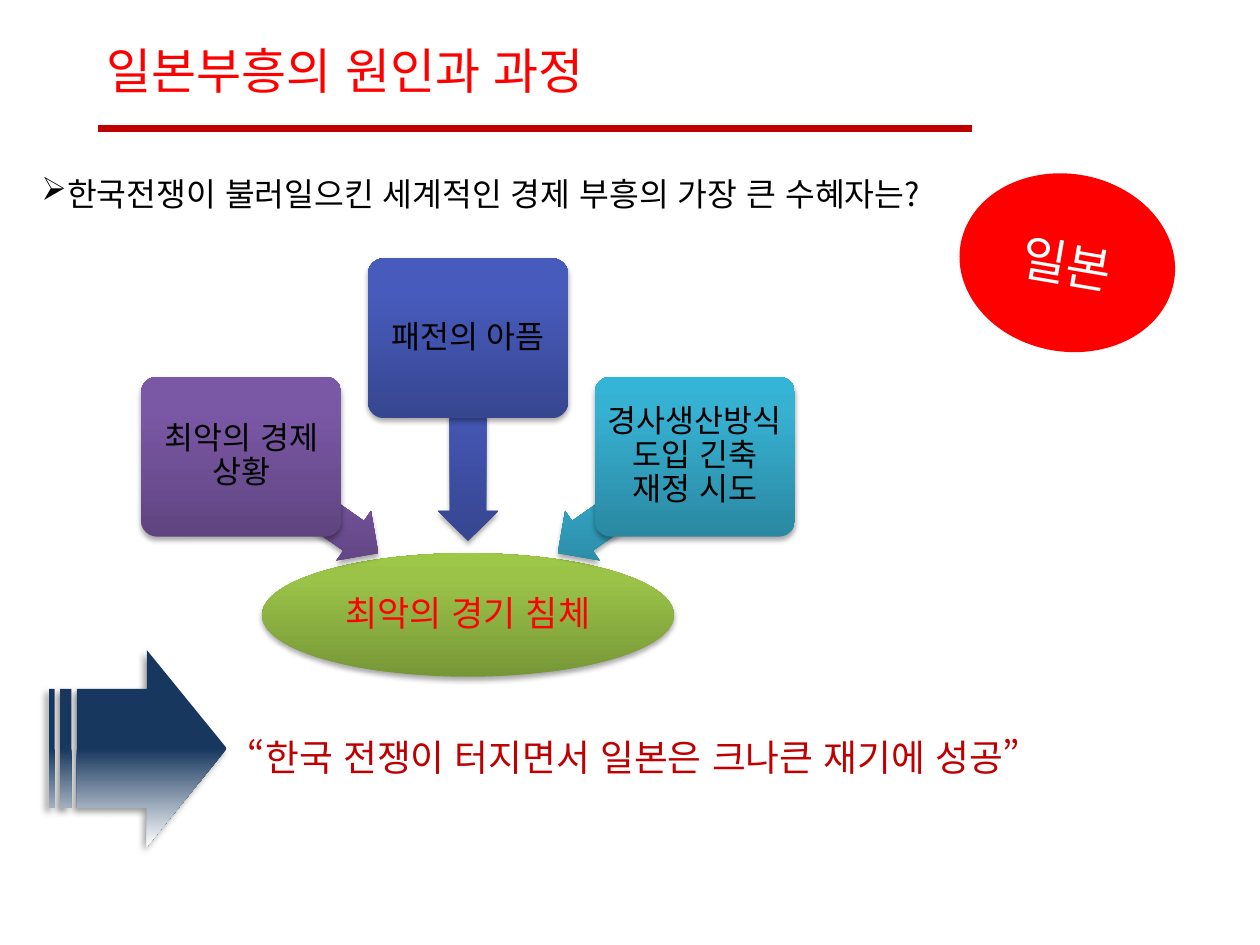
from lxml import etree
from pptx import Presentation
from pptx.dml.color import RGBColor
from pptx.enum import lang, shapes, text
from pptx.oxml import ns
from pptx.util import Pt

FONT = "Noto Sans CJK KR"
C = {
    "red": "FF0000", "crimson": "C00000", "black": "000000", "white": "FFFFFF",
    "navy": "17375E",
}
GRADS = {
    "green": [(0, "779737"), (80, "9BC348"), (100, "9DC746")],
    "purple": [(0, "5F4480"), (80, "7B58A6"), (100, "7C57A8")],
    "blue": [(0, "374691"), (80, "475BBC"), (100, "455ABF")],
    "teal": [(0, "2A88A2"), (80, "37B1D2"), (100, "34B4D6")],
    "fade": [(50, C["navy"]), (100, C["white"])],
}
SOFT = (35, 3.1, 1.8, 90)
DEEP = (40, 4, 3, 135)
MID, TOP = text.MSO_ANCHOR.MIDDLE, text.MSO_ANCHOR.TOP
CENTER, LEFT = text.PP_ALIGN.CENTER, text.PP_ALIGN.LEFT
KIND = shapes.MSO_SHAPE


def add(parent, tag, **attrs):
    el = etree.SubElement(parent, ns.qn(tag))
    for key, value in attrs.items():
        el.set(key, str(value))
    return el


def color(parent, value):
    return add(parent, "a:srgbClr", val=value)


def write(sp, words, size, fill, align=CENTER, anchor=MID, margin=None, bullet=None, spacing=None):
    tf = sp.text_frame
    tf.word_wrap = True
    tf.vertical_anchor = anchor
    if margin is not None:
        tf.margin_left = tf.margin_right = tf.margin_top = tf.margin_bottom = Pt(margin)
    p = tf.paragraphs[0]
    p.alignment = align
    if spacing:
        p.line_spacing = spacing
    if bullet:
        add(p._p.get_or_add_pPr(), "a:buChar", char=bullet)
    r = p.add_run()
    r.text = words
    r.font.size = Pt(size)
    r.font.name = FONT
    r.font.language_id = lang.MSO_LANGUAGE_ID.KOREAN
    r.font.color.rgb = RGBColor.from_string(C[fill])
    add(r._r.get_or_add_rPr(), "a:ea", typeface=FONT)


def label(s, x, y, w, h, words, size, fill, **style):
    sp = s.shapes.add_textbox(Pt(x), Pt(y), Pt(w), Pt(h))
    write(sp, words, size, fill, **style)


def shape(s, kind, x, y, w, h, rotation=0, adjust=()):
    sp = s.shapes.add_shape(kind, Pt(x), Pt(y), Pt(w), Pt(h))
    sp.shadow.inherit = False
    sp.line.fill.background()
    sp.rotation = rotation
    for i, value in enumerate(adjust):
        sp.adjustments[i] = value
    return sp


def shade(sp, grad, angle=270, shadow=SOFT):
    pr = sp._element.spPr
    fill = etree.Element(ns.qn("a:gradFill"), rotWithShape="0")
    stops = add(fill, "a:gsLst")
    for pos, value in GRADS[grad]:
        color(add(stops, "a:gs", pos=pos * 1000), value)
    add(fill, "a:lin", ang=angle * 60000, scaled=0)
    pr.find(ns.qn("a:prstGeom")).addnext(fill)
    alpha, blur, dist, direction = shadow
    outer = add(pr.find(ns.qn("a:effectLst")), "a:outerShdw", blurRad=int(Pt(blur)),
                dist=int(Pt(dist)), dir=direction * 60000, rotWithShape=0)
    add(color(outer, C["black"]), "a:alpha", val=alpha * 1000)


def header(s, x, y):
    label(s, x, y, 315.4, 56.9, "일본부흥의 원인과 과정", 28, "red", anchor=MID)
    rule_x, rule_y = x + 16.6, y + 61.9
    rule = s.shapes.add_connector(shapes.MSO_CONNECTOR.STRAIGHT, Pt(rule_x), Pt(rule_y),
                                  Pt(rule_x + 499), Pt(rule_y))
    rule.line.color.rgb = RGBColor.from_string(C["crimson"])
    rule.line.width = Pt(4)
    add(rule._element.spPr, "a:effectLst")


def question(s, x, y):
    label(s, x, y, 596.2, 33.8, "한국전쟁이 불러일으킨 세계적인 경제 부흥의 가장 큰 수혜자는?",
          18.5, "black", align=LEFT, anchor=TOP, bullet="➢")
    sp = shape(s, KIND.OVAL, x + 531.4, y + 3.6, 123.8, 101.5, rotation=9.7)
    sp.fill.solid()
    sp.fill.fore_color.rgb = RGBColor.from_string(C["red"])
    write(sp, "일본", 28, "white")


def causes(s, x, y):
    tile_w, tile_h, step, drop = 114.5, 91.4, 129.6, 67.7
    middle = x + step + tile_w / 2
    result_w = 235.4
    result = shape(s, KIND.OVAL, middle - result_w / 2, y + 168.5, result_w, 70.6)
    shade(result, "green")
    write(result, "최악의 경기 침체", 20, "red", margin=0.7, spacing=0.9)
    tiles = [
        ("최악의 경제 상황", "purple", drop, -90.5, 141, 95.8, 215),
        ("패전의 아픔", "blue", 0, 0, 103.7, 115.9, 270),
        ("경사생산방식도입 긴축 재정 시도", "teal", drop, 90.5, 141, 95.8, 325),
    ]
    for i, (words, grad, top, shift, arrow_y, arrow_w, turn) in enumerate(tiles):
        arrow = shape(s, KIND.LEFT_ARROW, middle + shift - arrow_w / 2, y + arrow_y - 17.3,
                      arrow_w, 34.6, turn, (0.6, 0.5))
        shade(arrow, grad)
        tile = shape(s, KIND.ROUNDED_RECTANGLE, x + i * step, y + top, tile_w, tile_h,
                     adjust=(0.1,))
        shade(tile, grad)
        write(tile, words, 18, "black", margin=0, spacing=0.9)


def conclusion(s, x, y):
    arrow = shape(s, KIND.STRIPED_RIGHT_ARROW, x, y, 101.5, 112.3, adjust=(0.605, 0.45))
    shade(arrow, "fade", 90, DEEP)
    label(s, x + 106.5, y + 44.6, 551.5, 39.6, "“한국 전쟁이 터지면서 일본은 크나큰 재기에 성공”",
          21, "crimson", align=LEFT, anchor=TOP)


def main():
    prs = Presentation()
    prs.slide_width, prs.slide_height = Pt(720), Pt(540)
    s = prs.slides.add_slide(prs.slide_layouts[6])
    header(s, 39.6, 11.5)
    question(s, 16.6, 95.8)
    causes(s, 80.6, 147.6)
    conclusion(s, 28.1, 371.5)
    prs.save("out.pptx")


if __name__ == "__main__":
    main()
